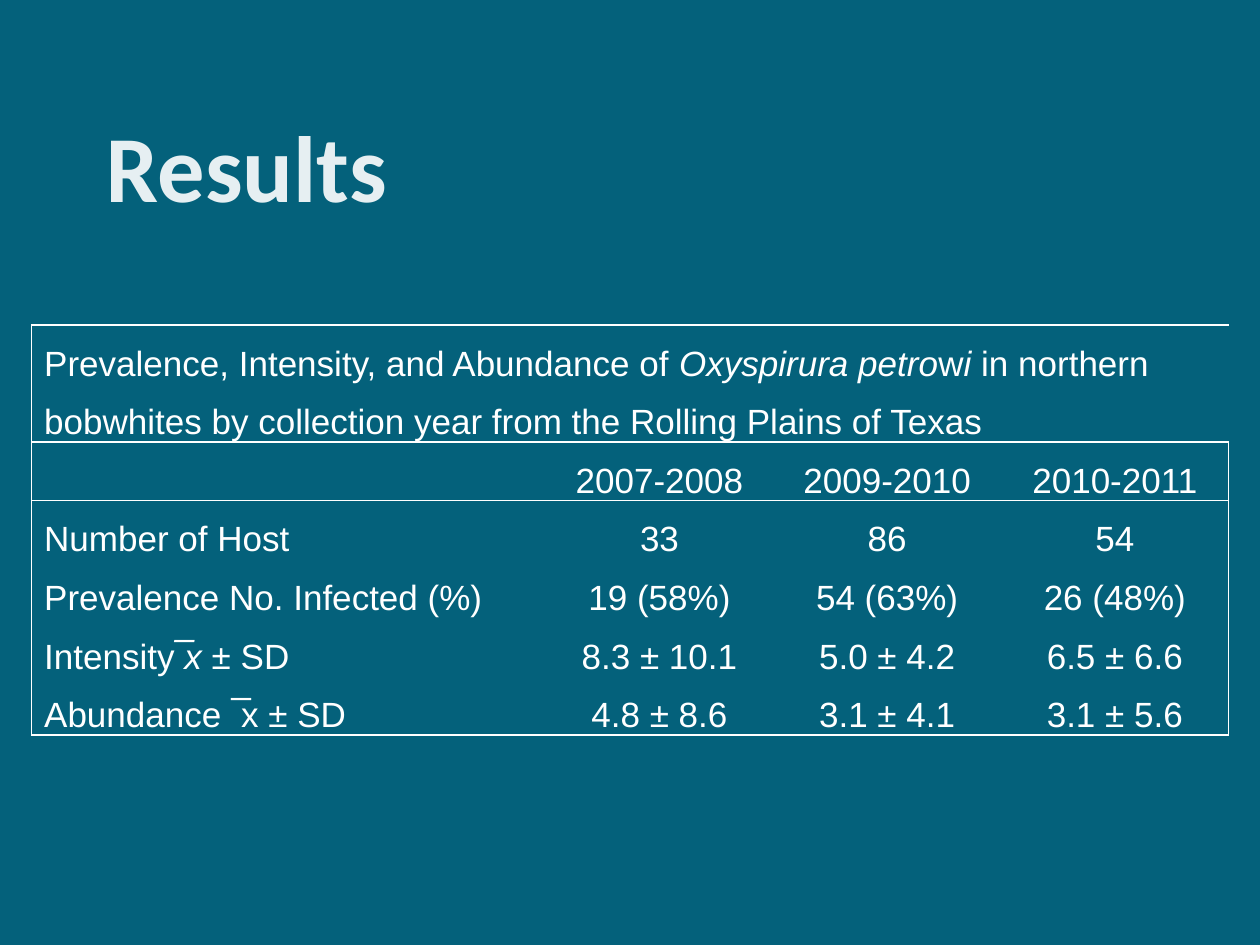
from lxml.etree import SubElement
from pptx import Presentation
from pptx.dml.color import RGBColor
from pptx.enum.text import MSO_ANCHOR, PP_ALIGN
from pptx.oxml.ns import qn
from pptx.util import Cm, Pt

TEAL = RGBColor(0x04, 0x61, 0x7B)
WHITE = RGBColor(0xFF, 0xFF, 0xFF)
PLAIN = "{2D5ABB26-0587-4C30-8999-92F81FD0307C}"  # no style, no grid

# A cell is a list of (text, italic) runs or a plain string
CAPTION = [
    ("Prevalence, Intensity, and Abundance of ", False),
    ("Oxyspirura petro", True),
    ("w", False),
    ("i", True),
    (" in northern bobwhites by collection year from the Rolling Plains of Texas", False),
]
ROWS = [
    [CAPTION, "", "", ""],
    ["", "2007-2008", "2009-2010", "2010-2011"],
    ["Number of Host", "33", "86", "54"],
    ["Prevalence No. Infected (%)", "19 (58%)", "54 (63%)", "26 (48%)"],
    [[("Intensity", False), (" ̅x", True), (" ± SD", False)],
     "8.3 ± 10.1", "5.0 ± 4.2", "6.5 ± 6.6"],
    ["Abundance  ̅x ± SD", "4.8 ± 8.6", "3.1 ± 4.1", "3.1 ± 5.6"],
]
WIDTHS = [10.36, 4.59, 4.59, 4.59]
LINE = 1.18  # height of one text line


def set_title(slide, text):
    title = slide.shapes.title
    title.left, title.top, title.width, title.height = Cm(1.88), Cm(0.53), Cm(21.67), Cm(4.06)
    frame = title.text_frame
    frame.text = text
    frame.vertical_anchor = MSO_ANCHOR.BOTTOM
    para = frame.paragraphs[0]
    para.alignment = PP_ALIGN.LEFT
    font = para.font
    font.name, font.size, font.bold = "Calibri", Pt(54), True
    font.color.rgb = WHITE
    # Slightly transparent white
    tint = font._element.find(".//" + qn("a:srgbClr"))
    SubElement(tint, qn("a:alpha"), val="90000")


def add_border(cell, side):
    line = SubElement(cell._tc.get_or_add_tcPr(), qn("a:ln" + side), w=str(Pt(1)))
    fill = SubElement(line, qn("a:solidFill"))
    SubElement(fill, qn("a:srgbClr"), val=str(WHITE))


def find_sides(row, col):
    """Outer frame, a rule under the caption and one under the years."""
    last = len(ROWS) - 1
    rules = {
        "L": col == 0,
        "R": col == len(WIDTHS) - 1,
        "T": row < 2,
        "B": row in (0, last) or (row == 1 and col > 0),
    }
    return [side for side, drawn in rules.items() if drawn]


def fill_cell(cell, content, row, col):
    cell.margin_left = Cm(0.25 if col == 0 else 0)
    cell.margin_right = cell.margin_top = cell.margin_bottom = 0
    middle = row > 3 and col > 0
    cell.vertical_anchor = MSO_ANCHOR.MIDDLE if middle else MSO_ANCHOR.BOTTOM
    for side in find_sides(row, col):
        add_border(cell, side)
    cell.fill.background()

    para = cell.text_frame.paragraphs[0]
    para.alignment = PP_ALIGN.CENTER if col else PP_ALIGN.LEFT
    para.line_spacing = 1.5
    font = para.font
    font.name, font.size = "Arial", Pt(20)
    font.color.rgb = WHITE
    runs = [(content, False)] if isinstance(content, str) else content
    for text, slant in runs:
        if text:
            run = para.add_run()
            run.text = text
            run.font.italic = slant


def add_grid(slide):
    frame = slide.shapes.add_table(
        len(ROWS), len(WIDTHS), Cm(0.64), Cm(6.55),
        Cm(sum(WIDTHS)), Cm(LINE * (len(ROWS) + 1)))
    table = frame.table
    table.first_row = table.horz_banding = False
    table._tbl.tblPr.find(qn("a:tableStyleId")).text = PLAIN
    for column, width in zip(table.columns, WIDTHS):
        column.width = Cm(width)
    for r, row in enumerate(ROWS):
        # The caption takes two lines
        table.rows[r].height = Cm(LINE * (1 if r else 2))
        for c, content in enumerate(row):
            fill_cell(table.cell(r, c), content, r, c)
    table.cell(0, 0).merge(table.cell(0, len(WIDTHS) - 1))


def main():
    deck = Presentation()
    deck.slide_width, deck.slide_height = Cm(25.4), Cm(19.05)
    slide = deck.slides.add_slide(deck.slide_layouts[5])
    back = slide.background.fill
    back.solid()
    back.fore_color.rgb = TEAL
    set_title(slide, "Results")
    add_grid(slide)
    deck.save("out.pptx")


if __name__ == "__main__":
    main()
